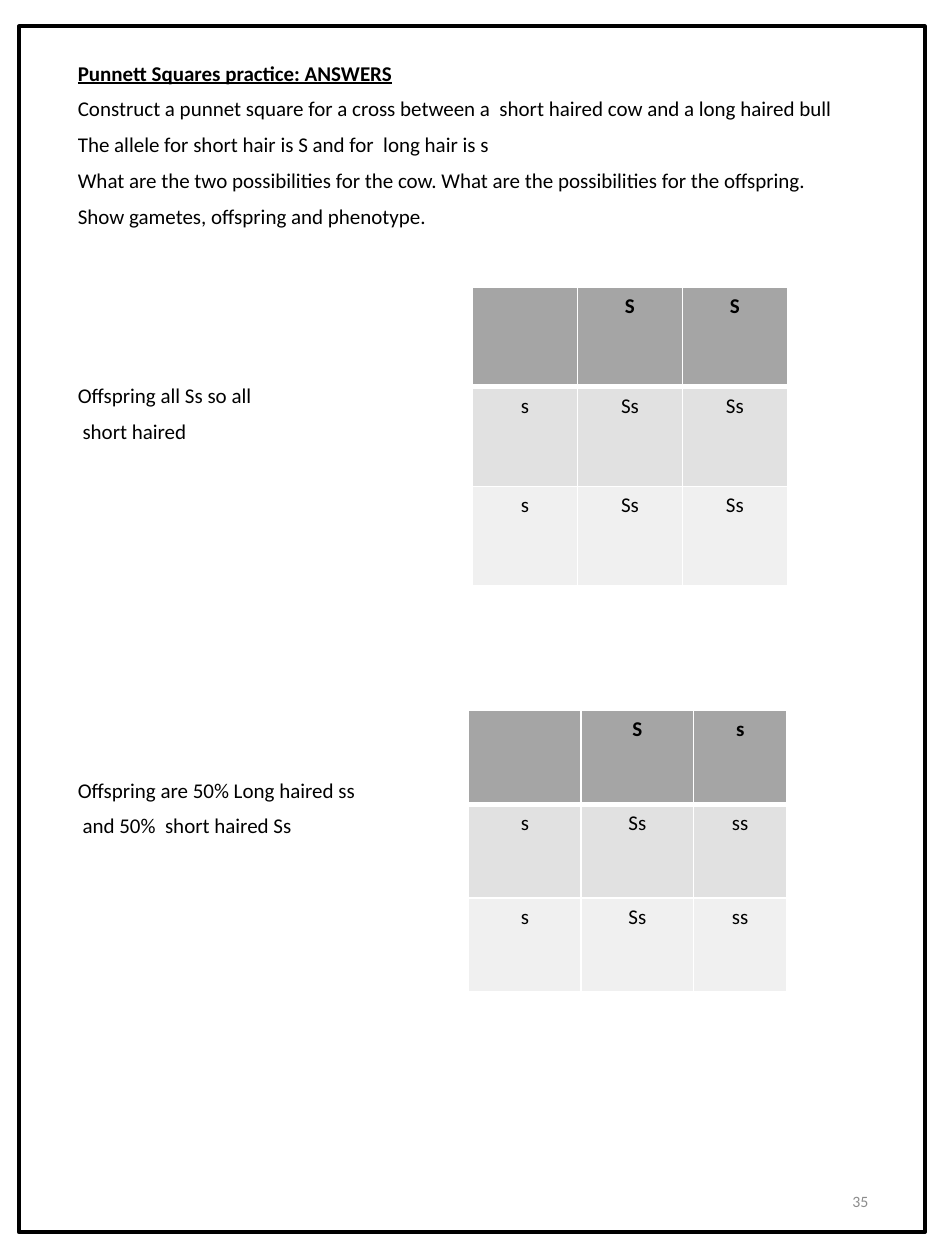
import pptx
import pptx.util
import pptx.dml.color
import pptx.enum.shapes
import pptx.enum.text
import pptx.oxml
import pptx.oxml.ns

Pt = pptx.util.Pt
RGB = pptx.dml.color.RGBColor
ALIGN = pptx.enum.text.PP_ALIGN
BLACK = RGB(0, 0, 0)
WHITE = RGB(255, 255, 255)
GREY = RGB(0x8C, 0x8C, 0x8C)
BANDS = [RGB(0xA5, 0xA5, 0xA5), RGB(0xE1, 0xE1, 0xE1), RGB(0xF0, 0xF0, 0xF0)]
FONT = "Calibri"
WIDE = pptx.util.Inches(7.5)
HIGH = pptx.util.Inches(10)
COL = WIDE / 100
ROW = HIGH / 100

TITLE = "Punnett Squares practice: ANSWERS"
LINES = [
    (TITLE, 7.5),
    ("Construct a punnet square for a cross between a  short haired cow and a long haired bull", 7.5),
    ("The allele for short hair is S and for  long hair is s", 7.5),
    ("What are the two possibilities for the cow. What are the possibilities for the offspring.", 7.5),
    ("Show gametes, offspring and phenotype.", 7.5),
    ("Offspring all Ss so all", 89.5),
    (" short haired", 7.5),
    ("Offspring are 50% Long haired ss", 192),
    (" and 50%  short haired Ss", 7.5),
]


def place(x, y, w, h):
    return round(x * COL), round(y * ROW), round(w * COL), round(h * ROW)


def style(para, size, color, bold=False):
    for run in para.runs:
        font = run.font
        font.name, font.size, font.bold = FONT, Pt(size), bold
        font.color.rgb = color


def add_box(slide, *area):
    frame = slide.shapes.add_textbox(*place(*area)).text_frame
    frame.word_wrap = True
    return frame


def add_body(slide):
    frame = add_box(slide, 6.93, 4.5, 86.27, 85.6)
    frame.text = "\n".join(text for text, gap in LINES)
    for para, (text, gap) in zip(frame.paragraphs, LINES):
        para.line_spacing = 0.9
        para.space_before = Pt(gap)
        style(para, 12, BLACK, text == TITLE)
    frame.paragraphs[0].runs[0].font.underline = True


def add_edge(cell, side, width):
    xml = (
        f'<a:{side} {pptx.oxml.ns.nsdecls("a")} w="{Pt(width)}">'
        f'<a:solidFill><a:srgbClr val="{WHITE}"/></a:solidFill></a:{side}>'
    )
    cell._tc.get_or_add_tcPr().append(pptx.oxml.parse_xml(xml))


def add_cell(cell, text, row):
    for side in ("lnL", "lnR", "lnT", "lnB"):
        thick = (row, side) in ((0, "lnB"), (1, "lnT"))
        add_edge(cell, side, 3 if thick else 1)
    cell.fill.solid()
    cell.fill.fore_color.rgb = BANDS[row]
    cell.text_frame.text = text
    para = cell.text_frame.paragraphs[0]
    para.alignment = ALIGN.CENTER
    style(para, 12, BLACK, row == 0)


def add_square(slide, x, y, cols, step, cow, bull):
    area = place(x, y, sum(cols), step * 3)
    table = slide.shapes.add_table(3, 3, *area).table
    for col, width in zip(table.columns, cols):
        col.width = round(width * COL)
    for row in table.rows:
        row.height = round(step * ROW)
    grid = [["", *cow]] + [[low, *(top + low for top in cow)] for low in bull]
    for r, texts in enumerate(grid):
        for c, text in enumerate(texts):
            add_cell(table.cell(r, c), text, r)


def add_frame(slide):
    kind = pptx.enum.shapes.MSO_SHAPE.RECTANGLE
    frame = slide.shapes.add_shape(kind, *place(2, 2.1, 95.87, 95.7))
    frame.shadow.inherit = False
    frame.fill.background()
    frame.line.color.rgb = BLACK
    frame.line.width = Pt(2.25)


def add_number(slide, text):
    frame = add_box(slide, 70.67, 92.7, 22.53, 5.3)
    frame.vertical_anchor = pptx.enum.text.MSO_ANCHOR.MIDDLE
    frame.text = text
    para = frame.paragraphs[0]
    para.alignment = ALIGN.RIGHT
    style(para, 9, GREY)


def main():
    deck = pptx.Presentation()
    deck.slide_width, deck.slide_height = WIDE, HIGH
    slide = deck.slides.add_slide(deck.slide_layouts[6])
    add_body(slide)
    add_square(slide, 50, 22.8, [11.11] * 3, 7.9, "SS", "ss")
    add_square(slide, 49.6, 56.4, [11.9, 11.9, 9.87], 7.43, "Ss", "ss")
    add_frame(slide)
    add_number(slide, "35")
    deck.save("out.pptx")


if __name__ == "__main__":
    main()
